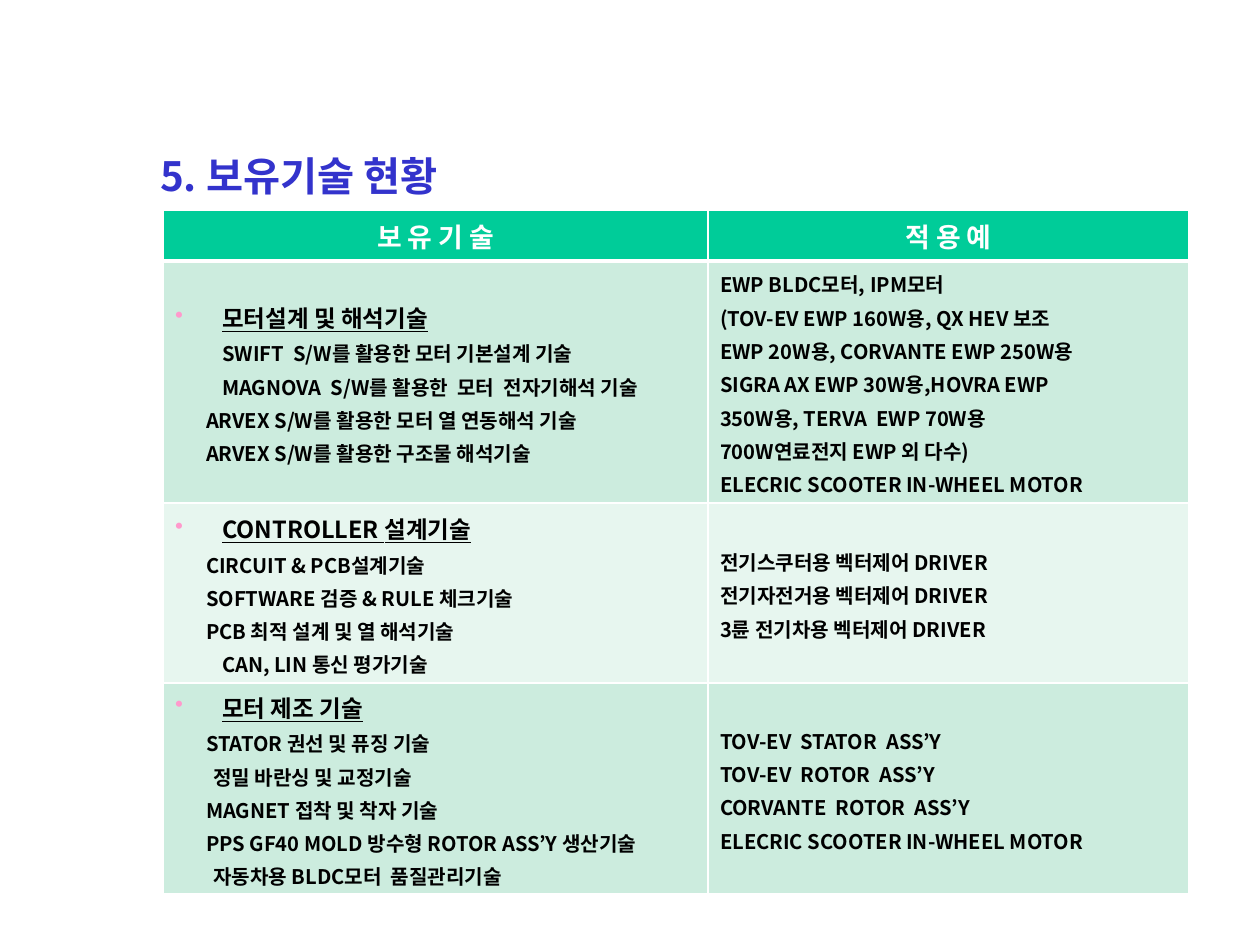
"""Build the slide listing the technologies held and where they are applied."""
from lxml.etree import SubElement
from pptx import Presentation
from pptx.dml.color import RGBColor
from pptx.enum.text import MSO_ANCHOR, MSO_AUTO_SIZE, PP_ALIGN
from pptx.oxml.ns import qn
from pptx.util import Emu, Pt

TITLE = "5. 보유기술 현황"
HEADERS = ["보 유 기 술", "적 용 예"]
NEAR, MID, FAR = 31, 38, 47
SECTIONS = [
    ("모터설계 및 해석기술",
     [(FAR, "SWIFT  S/W를 활용한 모터 기본설계 기술"),
      (FAR, "MAGNOVA  S/W를 활용한  모터  전자기해석 기술"),
      (NEAR, "ARVEX S/W를 활용한 모터 열 연동해석 기술"),
      (NEAR, "ARVEX S/W를 활용한 구조물 해석기술")],
     ["EWP BLDC모터, IPM모터",
      "(TOV-EV EWP 160W용, QX HEV 보조",
      "EWP 20W용, CORVANTE EWP 250W용",
      "SIGRA AX EWP 30W용,HOVRA EWP",
      "350W용, TERVA  EWP 70W용",
      "700W연료전지 EWP 외 다수)",
      "ELECRIC SCOOTER IN-WHEEL MOTOR"]),
    ("CONTROLLER 설계기술",
     [(NEAR, "CIRCUIT & PCB설계기술"),
      (NEAR, "SOFTWARE 검증 & RULE 체크기술"),
      (NEAR, "PCB 최적 설계 및 열 해석기술"),
      (FAR, "CAN, LIN 통신 평가기술")],
     ["전기스쿠터용 벡터제어 DRIVER",
      "전기자전거용 벡터제어 DRIVER",
      "3륜 전기차용 벡터제어 DRIVER"]),
    ("모터 제조 기술",
     [(NEAR, "STATOR 권선 및 퓨징 기술"),
      (MID, "정밀 바란싱 및 교정기술"),
      (NEAR, "MAGNET 접착 및 착자 기술"),
      (NEAR, "PPS GF40 MOLD 방수형 ROTOR ASS’Y 생산기술"),
      (MID, "자동차용 BLDC모터  품질관리기술")],
     ["TOV-EV  STATOR  ASS’Y",
      "TOV-EV  ROTOR  ASS’Y",
      "CORVANTE  ROTOR  ASS’Y",
      "ELECRIC SCOOTER IN-WHEEL MOTOR"]),
]
COLORS = {"title": "3333CC", "header": "00CC99", "odd": "CCECDE",
          "even": "E7F6EF", "text": "000000", "white": "FFFFFF",
          "bullet": "FF99CC"}
FONT = "Noto Sans CJK KR"
SLIDE_SIZE = (1260, 932)
TITLE_BOX = (148, 145, 614, 61)
TABLE_AT = (163, 210)
COL_WIDTHS = [545, 481]
ROW_HEIGHTS = [51, 242, 180, 211]
SCALE = 7563


def px(n):
    return Emu(n * SCALE)


def add_run(p, text, size, color, underline=False):
    r = p.add_run()
    r.text = text
    r.font.name = FONT
    r.font.size = Pt(size)
    r.font.bold = True
    r.font.underline = underline
    r.font.color.rgb = RGBColor.from_string(COLORS[color])
    SubElement(r.font._element, qn("a:ea"), typeface=FONT)


def add_bullet(p):
    pPr = p._p.get_or_add_pPr()
    pPr.set("marL", str(px(FAR)))
    pPr.set("indent", str(-px(FAR)))
    color = SubElement(pPr, qn("a:buClr"))
    SubElement(color, qn("a:srgbClr"), val=COLORS["bullet"])
    SubElement(pPr, qn("a:buChar"), char="•")


def style_cell(cell, fill, bottom):
    tcPr = cell._tc.get_or_add_tcPr()
    for side, width in (("L", 1), ("R", 1), ("T", 1), ("B", bottom)):
        ln = SubElement(tcPr, qn(f"a:ln{side}"), w=str(Pt(width)))
        SubElement(SubElement(ln, qn("a:solidFill")), qn("a:srgbClr"),
                   val=COLORS["white"])
    cell.fill.solid()
    cell.fill.fore_color.rgb = RGBColor.from_string(COLORS[fill])


def fill_list(cell, lines, heading=None):
    cell.vertical_anchor = MSO_ANCHOR.MIDDLE
    cell.margin_top, cell.margin_bottom = px(7), px(3)
    tf = cell.text_frame
    p = tf.paragraphs[0]
    if heading:
        add_bullet(p)
        add_run(p, heading, 14, "text", underline=True)
    for i, (indent, text) in enumerate(lines):
        if i or heading:
            p = tf.add_paragraph()
            p.space_before = Pt(2.4)
        p._p.get_or_add_pPr().set("marL", str(px(indent)))
        add_run(p, text, 12, "text")


def add_title(s):
    sp = s.shapes.title
    sp.left, sp.top, sp.width, sp.height = map(px, TITLE_BOX)
    tf = sp.text_frame
    tf.auto_size = MSO_AUTO_SIZE.NONE
    tf.vertical_anchor = MSO_ANCHOR.MIDDLE
    p = tf.paragraphs[0]
    p.alignment = PP_ALIGN.LEFT
    add_run(p, TITLE, 24, "title")


def add_technology_table(s):
    size = (sum(COL_WIDTHS), sum(ROW_HEIGHTS))
    table = s.shapes.add_table(len(ROW_HEIGHTS), len(COL_WIDTHS),
                               *map(px, TABLE_AT + size)).table
    for col, width in zip(table.columns, COL_WIDTHS):
        col.width = px(width)
    for row, height in zip(table.rows, ROW_HEIGHTS):
        row.height = px(height)
    for i, text in enumerate(HEADERS):
        cell = table.cell(0, i)
        style_cell(cell, "header", 3)
        p = cell.text_frame.paragraphs[0]
        p.alignment = PP_ALIGN.CENTER
        add_run(p, text, 16, "white")
    for i, (heading, skills, uses) in enumerate(SECTIONS, 1):
        left, right = table.cell(i, 0), table.cell(i, 1)
        for cell in (left, right):
            style_cell(cell, "odd" if i % 2 else "even", 1)
        fill_list(left, skills, heading)
        fill_list(right, [(0, use) for use in uses])


def main():
    prs = Presentation()
    prs.slide_width, prs.slide_height = map(px, SLIDE_SIZE)
    s = prs.slides.add_slide(prs.slide_layouts[5])
    add_title(s)
    add_technology_table(s)
    prs.save("out.pptx")


if __name__ == "__main__":
    main()
